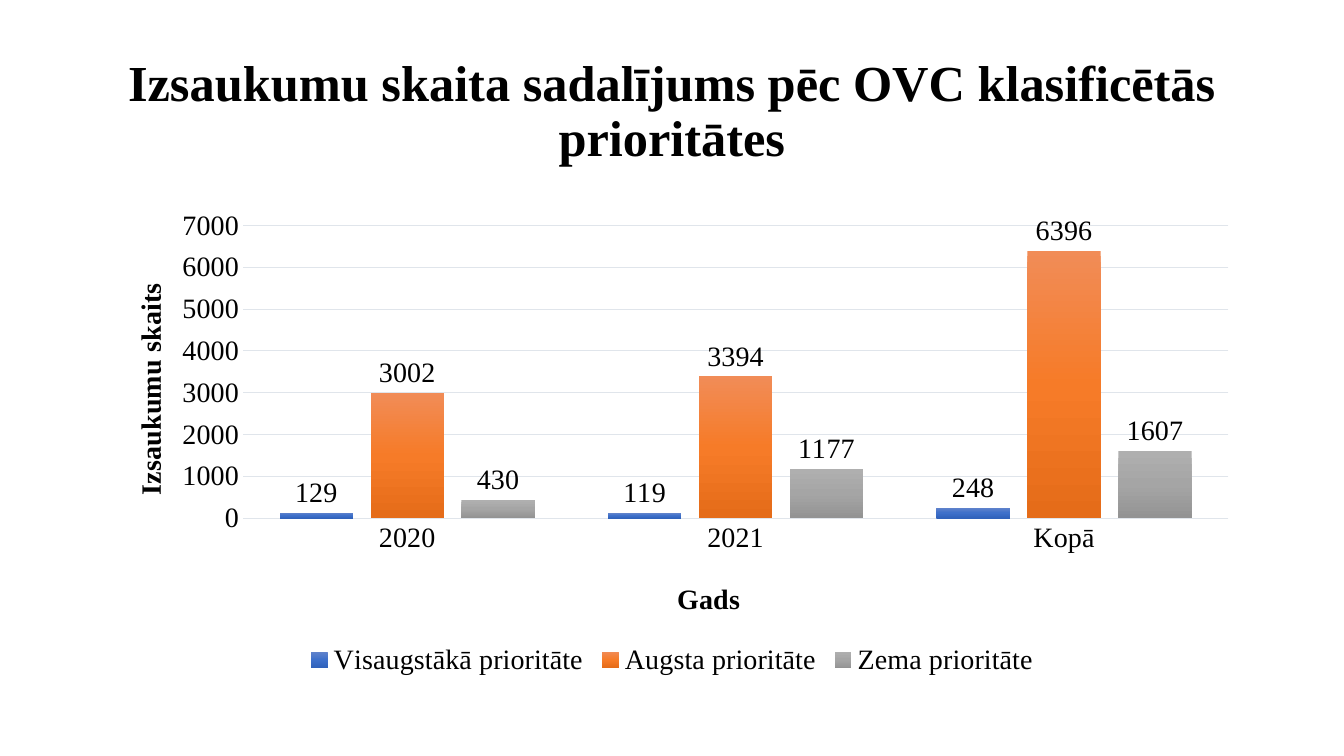
from pptx import Presentation, util as u
from pptx.chart.data import CategoryChartData
from pptx.dml.color import RGBColor
from pptx.enum import chart as ch, text
from pptx.oxml import parse_xml
from pptx.oxml.ns import nsdecls, qn

# Content
TITLE = "Izsaukumu skaita sadalījums pēc OVC klasificētās prioritātes"
X_TITLE, Y_TITLE = "Gads", "Izsaukumu skaits"
YEARS = ["2020", "2021", "Kopā"]
PRIORITIES = [
    ("Visaugstākā prioritāte", (129, 119, 248), "blue"),
    ("Augsta prioritāte", (3002, 3394, 6396), "orange"),
    ("Zema prioritāte", (430, 1177, 1607), "grey"),
]

# Format
FONT = "Times New Roman"
COLORS = {"text": "000000", "grid": "E0E5EB"}
GRADIENTS = {
    "blue": ("6183CB", "3E70CA", "3062BB"),
    "orange": ("F18C57", "F67B28", "E56C19"),
    "grey": ("AFAFAF", "A5A5A5", "939393"),
}
PX = 9525
TITLE_BOX = (88, 38, 1104, 139)
CHART_BOX = (88, 192, 1104, 457)
# Fractions of the chart area
PLOT_AREA = {"x": 0.13, "y": 0.05, "w": 0.85, "h": 0.61}
X_TITLE_AT = {"x": 0.5, "y": 0.78}
Y_TITLE_AT = {"x": 0.03, "y": 0.16}


def set_all(obj, **values):
    for name, value in values.items():
        setattr(obj, name, value)


def set_font(font, size, bold=False):
    set_all(font, name=FONT, size=u.Pt(size), bold=bold)
    font.color.rgb = RGBColor.from_string(COLORS["text"])


def set_line(line):
    line.color.rgb = RGBColor.from_string(COLORS["grid"])
    line.width = u.Pt(0.75)


def set_layout(el, index, place, inner=False):
    for old in el.findall(qn("c:layout")):
        el.remove(old)
    parts = '<c:layoutTarget val="inner"/>' if inner else ""
    parts += "".join(f'<c:{k}Mode val="edge"/>' for k in "xy")
    parts += "".join(f'<c:{k} val="{v}"/>' for k, v in place.items())
    el.insert(index, parse_xml(
        f'<c:layout {nsdecls("c")}><c:manualLayout>{parts}</c:manualLayout></c:layout>'))


def set_gradient(series, colors):
    stops = "".join(f'<a:gs pos="{i * 50000}"><a:srgbClr val="{c}"/></a:gs>'
                    for i, c in enumerate(colors))
    series._element.get_or_add_spPr().insert(0, parse_xml(
        f'<a:gradFill {nsdecls("a")} rotWithShape="1"><a:gsLst>{stops}</a:gsLst>'
        '<a:lin ang="5400000" scaled="0"/></a:gradFill>'))


def set_axis(axis, title, place, rotation):
    set_all(axis, major_tick_mark=ch.XL_TICK_MARK.NONE,
            minor_tick_mark=ch.XL_TICK_MARK.NONE)
    set_font(axis.tick_labels.font, 20)
    tf = axis.axis_title.text_frame
    r = tf.paragraphs[0].add_run()
    r.text = title
    set_font(r.font, 20, True)
    body = tf._txBody.find(qn("a:bodyPr"))
    body.set("rot", str(rotation * 60000))
    body.set("vert", "horz")
    set_layout(axis.axis_title._element, 1, place)


prs = Presentation()
set_all(prs, slide_width=1280 * PX, slide_height=720 * PX)
s = prs.slides.add_slide(prs.slide_layouts[5])

# Title
sp = s.shapes.title
set_all(sp, **dict(zip(("left", "top", "width", "height"), (v * PX for v in TITLE_BOX))))
tf = sp.text_frame
set_all(tf, word_wrap=True, auto_size=text.MSO_AUTO_SIZE.NONE,
        vertical_anchor=text.MSO_ANCHOR.MIDDLE)
p = tf.paragraphs[0]
set_all(p, alignment=text.PP_ALIGN.CENTER, line_spacing=0.9)
r = p.add_run()
r.text = TITLE
set_font(r.font, 36, True)

# Chart
data = CategoryChartData()
data.categories = YEARS
for name, values, _ in PRIORITIES:
    data.add_series(name, values)
chart = s.shapes.add_chart(ch.XL_CHART_TYPE.COLUMN_CLUSTERED,
                           *(v * PX for v in CHART_BOX), data).chart
set_all(chart, has_title=False, has_legend=True)
set_font(chart.font, 20)
set_layout(chart.plots[0]._element.getparent(), 0, PLOT_AREA, inner=True)

# Columns and their values
plot = chart.plots[0]
set_all(plot, gap_width=100, overlap=-24, vary_by_categories=False)
for series, (_, _, color) in zip(plot.series, PRIORITIES):
    set_gradient(series, GRADIENTS[color])
    labels = series.data_labels
    set_all(labels, show_value=True, position=ch.XL_LABEL_POSITION.OUTSIDE_END)
    set_font(labels.font, 20)

# Axes
set_axis(chart.category_axis, X_TITLE, X_TITLE_AT, 0)
set_line(chart.category_axis.format.line)
axis = chart.value_axis
set_axis(axis, Y_TITLE, Y_TITLE_AT, -90)
set_all(axis, minimum_scale=0, maximum_scale=7000, major_unit=1000)
axis.format.line.fill.background()
set_line(axis.major_gridlines.format.line)

# Legend
set_all(chart.legend, position=ch.XL_LEGEND_POSITION.BOTTOM, include_in_layout=False)
set_font(chart.legend.font, 20)

prs.save("out.pptx")
